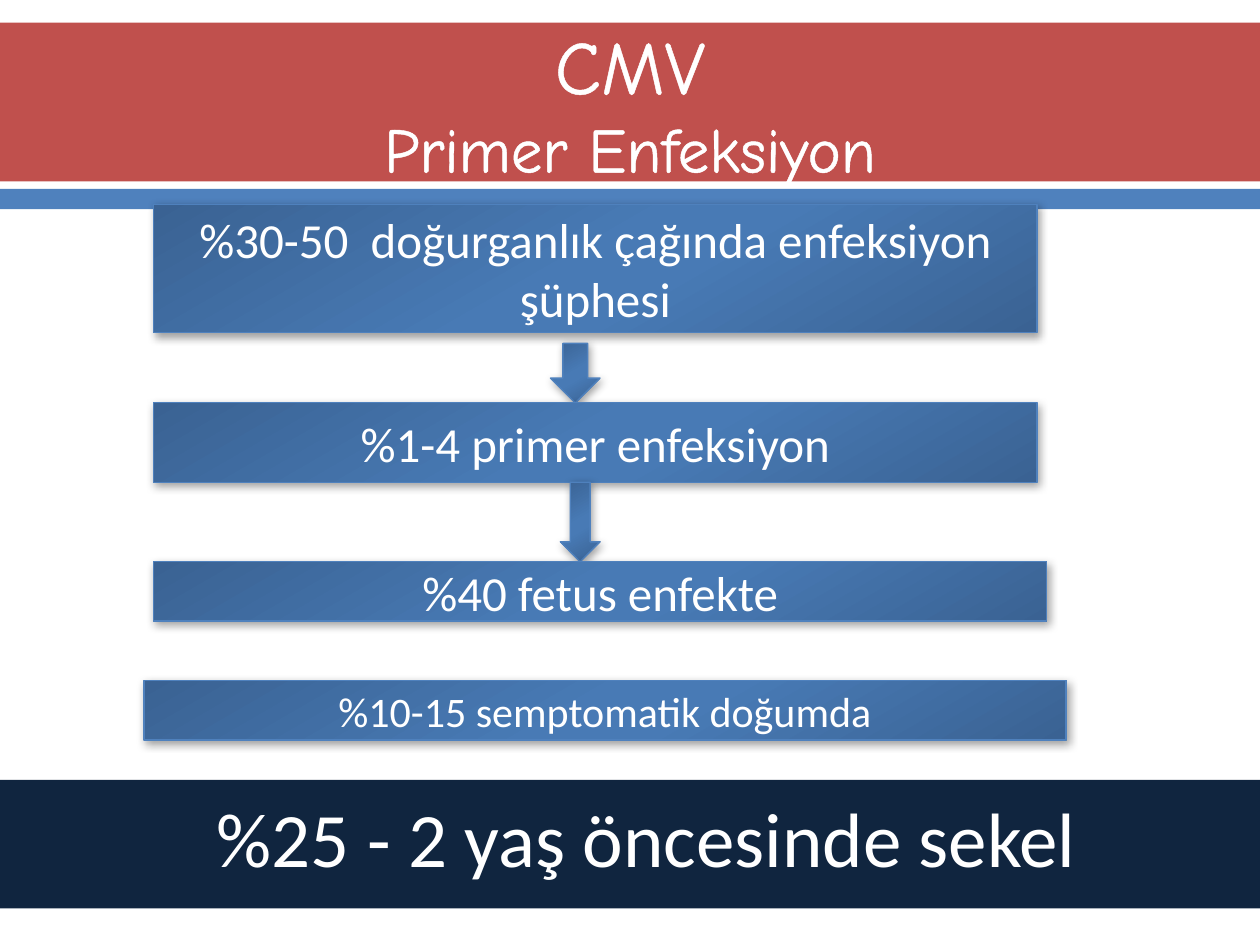
"""Build the slide that follows primary CMV infection step by step to later sequelae."""
from dataclasses import dataclass, field
from typing import Optional

from lxml import etree
from pptx import Presentation
from pptx.dml.color import RGBColor
from pptx.enum import shapes as sh, text as tx
from pptx.oxml import ns
from pptx.util import Pt


@dataclass(frozen=True)
class Theme:
    banner: str = "C0504D"
    accent: str = "4F81BD"
    closing: str = "10253F"
    ink: str = "FFFFFF"
    shadow: str = "000000"
    gradient: tuple = ((0, "3A6293"), (48, "487AB5"), (58, "487AB5"), (100, "3A6293"))
    angle: int = 60
    edge: float = 0.79
    heading_edge: float = 1.1
    heading_font: str = "Comic Neue"
    body_font: str = "Calibri"
    heading: float = 43.2
    subheading: float = 36
    step: float = 28
    small_step: float = 24
    conclusion: float = 44


THEME = Theme()
RECT = sh.MSO_SHAPE.RECTANGLE
ARROW = sh.MSO_SHAPE.DOWN_ARROW


@dataclass(frozen=True)
class Box:
    left: float
    top: float
    width: float
    height: float

    def lengths(self) -> tuple:
        return tuple(Pt(v) for v in (self.left, self.top, self.width, self.height))


@dataclass(frozen=True)
class Band:
    box: Box
    color: str


@dataclass(frozen=True)
class Stage:
    box: Box
    label: str = ""
    size: float = THEME.step
    preset: sh.MSO_SHAPE = field(default=RECT)


BANDS = (
    Band(Box(0, 13, 720, 90.7), THEME.banner),
    Band(Box(0, 108, 720, 11.5), THEME.accent),
)
CLOSING = Band(Box(0, 445.7, 720, 73.4), THEME.closing)
TITLE = Box(36, 14.4, 648, 87.8)
STAGES = (
    Stage(Box(87.8, 116.8, 504.7, 73.4), "%30-50  doğurganlık çağında enfeksiyon şüphesi"),
    Stage(Box(314.6, 196.2, 28.3, 34), preset=ARROW),
    Stage(Box(87.8, 230.2, 504.7, 45.4), "%1-4 primer enfeksiyon"),
    Stage(Box(320.2, 275.6, 22.7, 45.4), preset=ARROW),
    Stage(Box(87.8, 321, 510.4, 34), "%40 fetus enfekte"),
    Stage(Box(82.2, 388.9, 527, 34), "%10-15 semptomatik doğumda", THEME.small_step),
)


def add_xml(parent, markup: str, index: Optional[int] = None) -> None:
    head, tail = markup.split(" ", 1)
    node = etree.fromstring(f"{head} {ns.nsdecls('a')} {tail}")
    parent.insert(len(parent) if index is None else index, node)


def set_format(target, values: dict) -> None:
    for name, value in values.items():
        setattr(target, name, value)


def add_run(paragraph, wording: str, size: float, font: str = THEME.body_font):
    run = paragraph.add_run()
    run.text = wording
    set_format(run.font, {"size": Pt(size), "name": font})
    run.font.color.rgb = RGBColor.from_string(THEME.ink)
    return run


def add_band(slide, band: Band):
    strip = slide.shapes.add_shape(RECT, *band.box.lengths())
    strip.shadow.inherit = False
    strip.fill.solid()
    strip.fill.fore_color.rgb = RGBColor.from_string(band.color)
    strip.line.fill.background()
    return strip


def add_title(slide) -> None:
    title = slide.shapes.add_textbox(*TITLE.lengths())
    set_format(title.text_frame, {"word_wrap": True, "vertical_anchor": tx.MSO_ANCHOR.MIDDLE})
    paragraph = title.text_frame.paragraphs[0]
    paragraph.alignment = tx.PP_ALIGN.CENTER
    for wording, size in (("CMV\v", THEME.heading), ("Primer Enfeksiyon", THEME.subheading)):
        if wording.endswith("\v"):
            run = add_run(paragraph, wording[:-1], size, THEME.heading_font)
            paragraph.add_line_break()
        else:
            run = add_run(paragraph, wording, size, THEME.heading_font)
        add_xml(
            run.font._element,
            f'<a:ln w="{Pt(THEME.heading_edge)}"><a:solidFill>'
            f'<a:srgbClr val="{THEME.ink}"/></a:solidFill></a:ln>',
            0,
        )


def add_stage(slide, stage: Stage) -> None:
    block = slide.shapes.add_shape(stage.preset, *stage.box.lengths())
    block.line.color.rgb = RGBColor.from_string(THEME.accent)
    block.line.width = Pt(THEME.edge)
    properties = block._element.spPr
    stops = "".join(
        f'<a:gs pos="{place * 1000}"><a:srgbClr val="{color}"/></a:gs>'
        for place, color in THEME.gradient
    )
    add_xml(
        properties,
        f'<a:gradFill rotWithShape="1"><a:gsLst>{stops}</a:gsLst>'
        f'<a:lin ang="{THEME.angle * 60000}" scaled="0"/></a:gradFill>',
        2,
    )
    add_xml(
        properties,
        f'<a:effectLst ><a:outerShdw blurRad="{Pt(5)}" dist="{Pt(2)}" '
        f'dir="{THEME.angle * 60000}" rotWithShape="0"><a:srgbClr val="{THEME.shadow}">'
        '<a:alpha val="36000"/></a:srgbClr></a:outerShdw></a:effectLst>',
    )
    if stage.label:
        set_format(block.text_frame, {"word_wrap": True, "vertical_anchor": tx.MSO_ANCHOR.MIDDLE})
        paragraph = block.text_frame.paragraphs[0]
        paragraph.alignment = tx.PP_ALIGN.CENTER
        add_run(paragraph, stage.label, stage.size)


def add_conclusion(slide) -> None:
    strip = add_band(slide, CLOSING)
    set_format(
        strip.text_frame,
        {
            "word_wrap": True,
            "vertical_anchor": tx.MSO_ANCHOR.TOP,
            "margin_left": Pt(124),
            "margin_top": Pt(6),
        },
    )
    paragraph = strip.text_frame.paragraphs[0]
    paragraph.alignment = tx.PP_ALIGN.JUSTIFY
    add_run(paragraph, "%25 - 2 yaş öncesinde sekel", THEME.conclusion)


def main() -> None:
    deck = Presentation()
    set_format(deck, {"slide_width": Pt(720), "slide_height": Pt(540)})
    slide = deck.slides.add_slide(deck.slide_layouts[6])
    for band in BANDS:
        add_band(slide, band)
    add_title(slide)
    add_conclusion(slide)
    for stage in STAGES:
        add_stage(slide, stage)
    deck.save("out.pptx")


if __name__ == "__main__":
    main()
